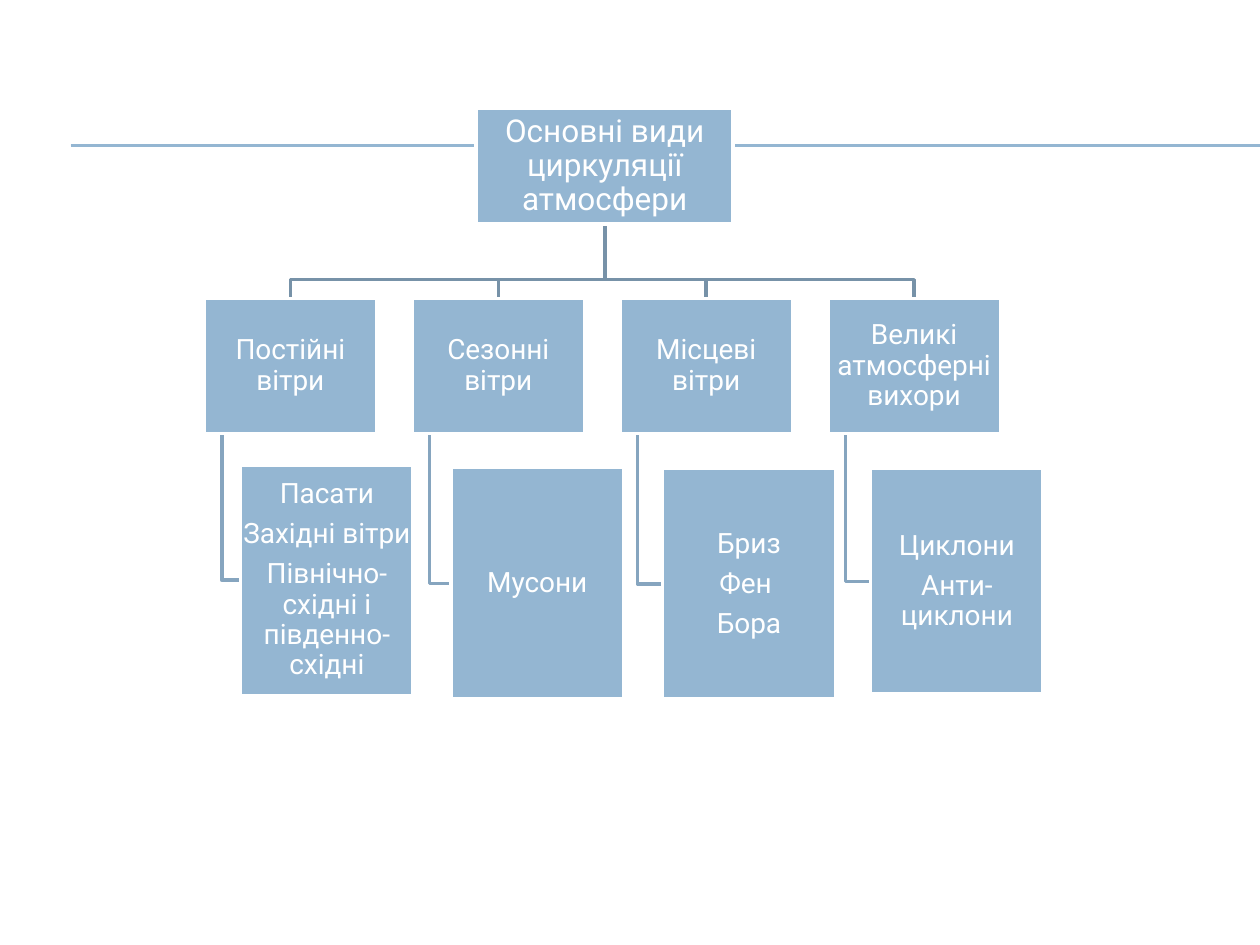
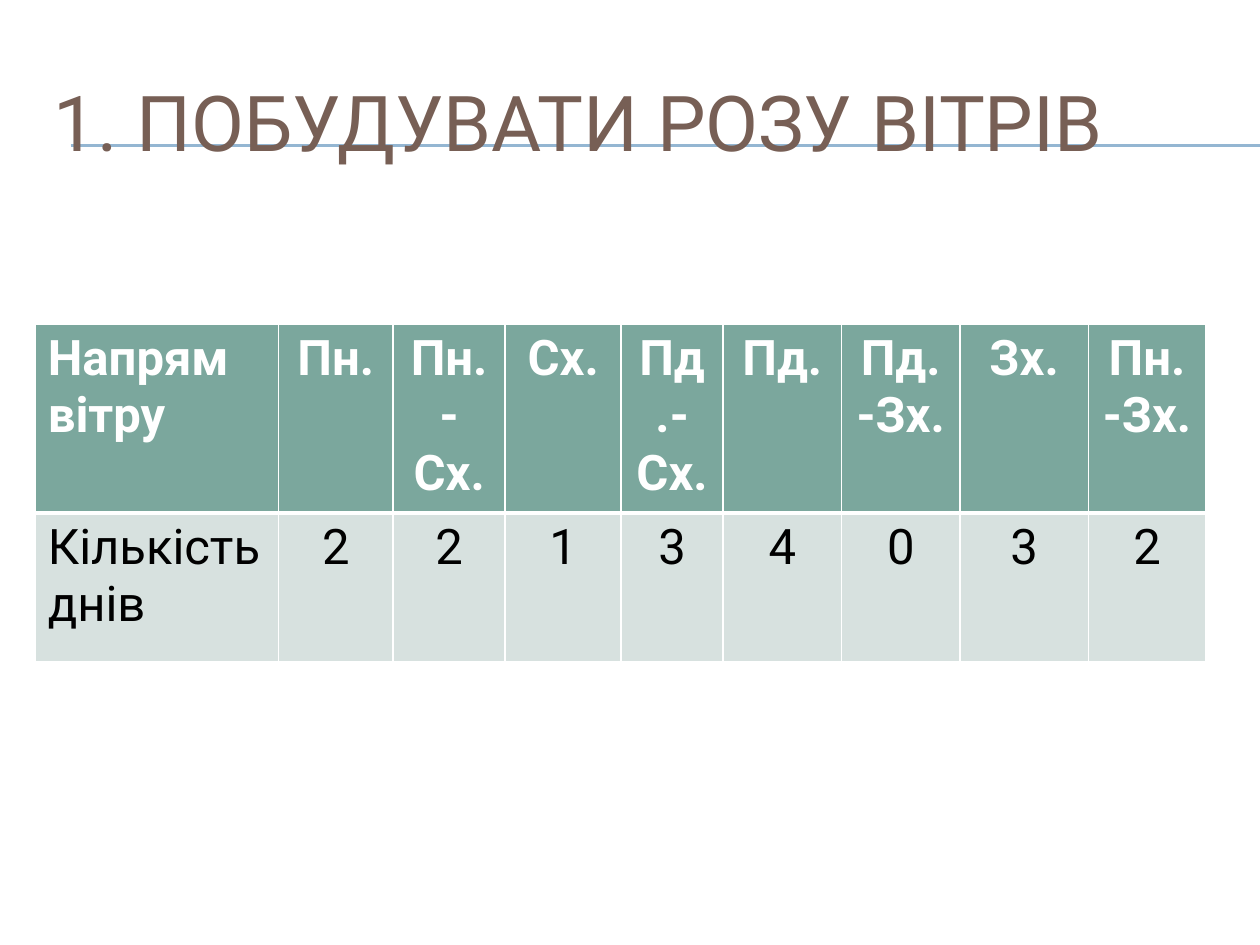
from lxml import etree
from pptx import Presentation
from pptx.dml.color import RGBColor
from pptx.enum.shapes import MSO_CONNECTOR as CONN, MSO_SHAPE as SHAPE
from pptx.enum.text import MSO_ANCHOR as ANCHOR, PP_ALIGN as ALIGN
from pptx.oxml.ns import qn
from pptx.util import Inches, Pt

# Content
ROOT = "Основні види циркуляції атмосфери"
BRANCHES = [  # heading, items, leaf (left, top, height)
    ("Постійні вітри",
     ["Пасати", "Західні вітри", "Північно-східні і південно-східні"], (1.91, 3.69, 1.83)),
    ("Сезонні вітри", ["Мусони"], (3.58, 3.71, 1.84)),
    ("Місцеві вітри", ["Бриз", "Фен ", "Бора"], (5.26, 3.72, 1.83)),
    ("Великі атмосферні вихори", ["Циклони", "Анти-циклони"], (6.91, 3.72, 1.79)),
]
TITLE = "1. ПОБУДУВАТИ РОЗУ ВІТРІВ"
WIND_DAYS = [
    ["Напрям вітру", "Пн.", "Пн.-Сх.", "Сх.", "Пд.-Сх.", "Пд.", "Пд.-Зх.", "Зх.", "Пн.-Зх."],
    ["Кількість днів", "2", "2", "1", "3", "4", "0", "3", "2"],
]

# Shared look
FONT = "Roboto"
BLUE, TRUNK, STEM, WHITE, BLACK = "94B6D2", "7792A8", "86A5BF", "FFFFFF", "000000"
BROWN, GREEN, PALE = "775F55", "7BA79D", "D7E1DF"

# Chart and table layout, in inches
ROOT_BOX = (3.78, 0.86, 2.04, 0.92)
BOX_W, BRANCH_H, BRANCH_TOP = 1.37, 1.07, 2.37
BRANCH_LEFT, BRANCH_STEP = 1.62, 1.65
TRUNK_Y, STEM_INSET = 2.22, 0.14
COL_WIDTHS = [1.93, 0.91, 0.89, 0.92, 0.81, 0.94, 0.94, 1.02, 0.93]
ROW_H = 1.18


def rgb(value):
    return RGBColor.from_string(value)


def write(tf, text, size=16, color=WHITE, bold=False, align=ALIGN.CENTER,
          spacing=None, after=None):
    """Fill a text frame, one paragraph for each item of a list."""
    lines = [text] if isinstance(text, str) else text
    tf.word_wrap = True
    for i, line in enumerate(lines):
        p = tf.paragraphs[0] if i == 0 else tf.add_paragraph()
        p.alignment = align
        p.line_spacing = spacing
        p.space_after = after
        r = p.add_run()
        r.text = line
        r.font.name, r.font.size, r.font.bold = FONT, Pt(size), bold
        r.font.color.rgb = rgb(color)


def new_slide(prs):
    """Blank slide with the double rule across its top."""
    s = prs.slides.add_slide(prs.slide_layouts[6])
    for y in (1.15, 1.16):
        rule = s.shapes.add_connector(CONN.STRAIGHT, Inches(0.56), Inches(y), Inches(10), Inches(y))
        rule.line.color.rgb, rule.line.width = rgb(BLUE), Pt(0.75)
        etree.SubElement(rule._element.spPr, qn("a:effectLst"))
    return s


def bent_line(s, points, color):
    start, *rest = [(Inches(x), Inches(y)) for x, y in points]
    builder = s.shapes.build_freeform(*start)
    builder.add_line_segments(rest, close=False)
    sp = builder.convert_to_shape()
    sp.shadow.inherit = False
    sp.fill.background()
    sp.line.color.rgb, sp.line.width = rgb(color), Pt(2)


def box(s, bounds, text, size=16):
    sp = s.shapes.add_shape(SHAPE.RECTANGLE, *map(Inches, bounds))
    sp.shadow.inherit = False
    sp.fill.solid()
    sp.fill.fore_color.rgb = rgb(BLUE)
    sp.line.color.rgb, sp.line.width = rgb(WHITE), Pt(2)
    tf = sp.text_frame
    tf.vertical_anchor = ANCHOR.MIDDLE
    tf.margin_left = tf.margin_right = tf.margin_top = tf.margin_bottom = Inches(0.01)
    write(tf, text, size, spacing=0.9, after=Pt(0.35 * size))


def cell_borders(cell, **widths):
    """White borders; widths in points for L, R, T and B."""
    tcPr = cell._tc.get_or_add_tcPr()
    for i, side in enumerate("LRTB"):
        ln = etree.Element(qn("a:ln" + side), w=str(Pt(widths.get(side, 1))))
        fill = etree.SubElement(ln, qn("a:solidFill"))
        etree.SubElement(fill, qn("a:srgbClr"), val=WHITE)
        tcPr.insert(i, ln)


def circulation_slide(prs):
    s = new_slide(prs)
    root_x = ROOT_BOX[0] + ROOT_BOX[2] / 2
    root_bottom = ROOT_BOX[1] + ROOT_BOX[3]
    lefts = [BRANCH_LEFT + i * BRANCH_STEP for i in range(len(BRANCHES))]

    # Connecting lines lie behind the boxes
    for left, (_, _, (leaf_x, leaf_y, leaf_h)) in zip(lefts, BRANCHES):
        mid, stem, leaf_mid = left + BOX_W / 2, left + STEM_INSET, leaf_y + leaf_h / 2
        bent_line(s, [(stem, BRANCH_TOP + BRANCH_H), (stem, leaf_mid), (leaf_x, leaf_mid)], STEM)
        bent_line(s, [(root_x, root_bottom), (root_x, TRUNK_Y), (mid, TRUNK_Y),
                      (mid, BRANCH_TOP)], TRUNK)

    # Boxes
    box(s, ROOT_BOX, ROOT, size=18)
    for left, (heading, items, (leaf_x, leaf_y, leaf_h)) in zip(lefts, BRANCHES):
        box(s, (left, BRANCH_TOP, BOX_W, BRANCH_H), heading)
        box(s, (leaf_x, leaf_y, BOX_W, leaf_h), items)


def wind_rose_slide(prs):
    s = new_slide(prs)

    # Title
    tf = s.shapes.add_textbox(Inches(0.33), Inches(0.5), Inches(9.5), Inches(0.92)).text_frame
    tf.vertical_anchor = ANCHOR.MIDDLE
    write(tf, TITLE, 44, BROWN, align=ALIGN.LEFT)

    # Table of days by wind direction
    table = s.shapes.add_table(len(WIND_DAYS), len(COL_WIDTHS), Inches(0.28), Inches(2.57),
                               Inches(sum(COL_WIDTHS)), Inches(2 * ROW_H)).table
    for col, width in zip(table.columns, COL_WIDTHS):
        col.width = Inches(width)
    for r, values in enumerate(WIND_DAYS):
        header = r == 0
        for c, value in enumerate(values):
            cell = table.cell(r, c)
            cell.fill.solid()
            cell.fill.fore_color.rgb = rgb(GREEN if header else PALE)
            cell_borders(cell, **({"B": 3} if header else {"T": 3}))
            write(cell.text_frame, value, 28, WHITE if header else BLACK, bold=header,
                  align=ALIGN.CENTER if c else ALIGN.LEFT)


def main():
    prs = Presentation()
    prs.slide_width, prs.slide_height = Inches(10), Inches(7.5)
    circulation_slide(prs)
    wind_rose_slide(prs)
    prs.save("out.pptx")


if __name__ == "__main__":
    main()
